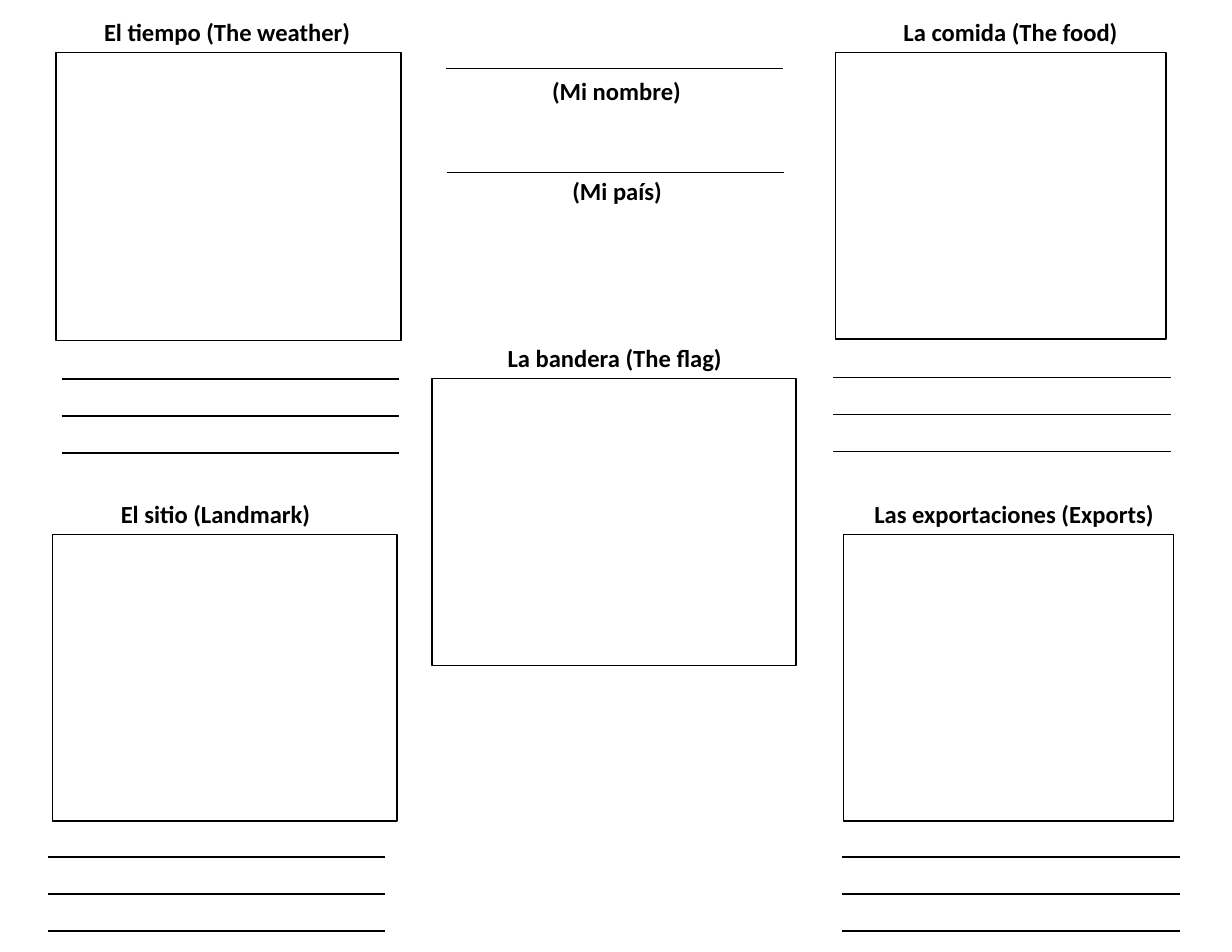
from dataclasses import dataclass

from pptx import Presentation
from pptx.dml.color import RGBColor
from pptx.enum.shapes import MSO_CONNECTOR as Connector, MSO_SHAPE as Shape
from pptx.enum.text import MSO_AUTO_SIZE as AutoSize, PP_ALIGN as Align
from pptx.oxml.ns import qn
from pptx.shapes.shapetree import GroupShapes
from pptx.util import Cm, Pt
from lxml.etree import SubElement


@dataclass(frozen=True)
class Theme:
    """Colours, type and line weights of the worksheet."""
    ink: RGBColor = RGBColor(0, 0, 0)
    font: str = "Calibri"
    heading_size: float = 15.8
    name_rule: float = 0.5
    panel_rule: float = 1


@dataclass(frozen=True)
class Panel:
    """A headed drawing box, with writing lines when they have a start."""
    heading: str
    left: float
    top: float
    width: float
    height: float
    heading_left: float
    heading_width: float
    rules_left: float | None = None
    rules_top: float = 0
    centred: bool = False


@dataclass(frozen=True)
class NameField:
    """A writing line with its caption below."""
    caption: str
    rule_left: float
    rule_top: float
    caption_left: float
    caption_top: float
    caption_width: float


THEME = Theme()
HEADING_HEIGHT = 0.94
RULE_LENGTH = 7.65
RULE_GAP = 0.84
RULES_PER_PANEL = 3

MY_NAME = NameField("(Mi nombre)", 10.11, 1.55, 12.27, 1.6, 3.45)
MY_COUNTRY = NameField("(Mi país)", 10.13, 3.91, 12.73, 3.86, 2.57)
PANELS = [
    Panel("El tiempo (The weather)", 1.27, 1.19, 7.82, 6.53, 2.11, 6.15, 1.4, 8.59),
    Panel("La comida (The food)", 18.95, 1.19, 7.49, 6.5, 20.24, 5.41, 18.9, 8.56),
    Panel("La bandera (The flag)", 9.8, 8.59, 8.26, 6.5, 10.95, 5.99, centred=True),
    Panel("El sitio (Landmark)", 1.19, 12.12, 7.82, 6.5, 2.49, 4.85, 1.09, 19.43),
    Panel("Las exportaciones (Exports)", 19.13, 12.12, 7.49, 6.5, 19.58, 6.91, 19.1, 19.43),
]


def add_text(shapes: GroupShapes, text: str, left: float, top: float, width: float, *,
             size: float = THEME.heading_size, bold: bool = True, centred: bool = False) -> None:
    """Add one line of text that grows with its content."""
    label = shapes.add_textbox(Cm(left), Cm(top), Cm(width), Cm(HEADING_HEIGHT))
    frame = label.text_frame
    frame.word_wrap = centred
    frame.auto_size = AutoSize.SHAPE_TO_FIT_TEXT
    paragraph = frame.paragraphs[0]
    if centred:
        paragraph.alignment = Align.CENTER
    run = paragraph.add_run()
    run.text = text
    run.font.name = THEME.font
    run.font.size = Pt(size)
    run.font.bold = bold
    run.font.color.rgb = THEME.ink


def add_rule(shapes: GroupShapes, left: float, top: float, weight: float) -> None:
    """Add a horizontal writing line."""
    rule = shapes.add_connector(
        Connector.STRAIGHT, Cm(left), Cm(top), Cm(left + RULE_LENGTH), Cm(top))
    rule.line.color.rgb = THEME.ink
    rule.line.width = Pt(weight)
    SubElement(rule._element.spPr, qn("a:effectLst"))


def add_panel(shapes: GroupShapes, panel: Panel) -> None:
    """Add a panel's writing lines, drawing box and heading."""
    if panel.rules_left is not None:
        for row in range(RULES_PER_PANEL):
            add_rule(shapes, panel.rules_left, panel.rules_top + row * RULE_GAP,
                     THEME.panel_rule)
    drawing_box = shapes.add_shape(
        Shape.RECTANGLE, Cm(panel.left), Cm(panel.top), Cm(panel.width), Cm(panel.height))
    drawing_box.shadow.inherit = False
    drawing_box.fill.background()
    drawing_box.line.color.rgb = THEME.ink
    drawing_box.line.width = Pt(THEME.panel_rule)
    add_text(shapes, panel.heading, panel.heading_left, panel.top - HEADING_HEIGHT,
             panel.heading_width, centred=panel.centred)


def add_name_field(shapes: GroupShapes, field: NameField) -> None:
    """Add a writing line and its caption."""
    add_rule(shapes, field.rule_left, field.rule_top, THEME.name_rule)
    add_text(shapes, field.caption, field.caption_left, field.caption_top, field.caption_width)


def main() -> None:
    """Build the country worksheet."""
    worksheet = Presentation()
    worksheet.slide_width, worksheet.slide_height = Cm(27.94), Cm(21.59)
    slide = worksheet.slides.add_slide(worksheet.slide_layouts[6])
    add_name_field(slide.shapes.add_group_shape().shapes, MY_NAME)
    for panel in PANELS:
        add_panel(slide.shapes.add_group_shape().shapes, panel)
    add_name_field(slide.shapes.add_group_shape().shapes, MY_COUNTRY)
    worksheet.save("out.pptx")


if __name__ == "__main__":
    main()
